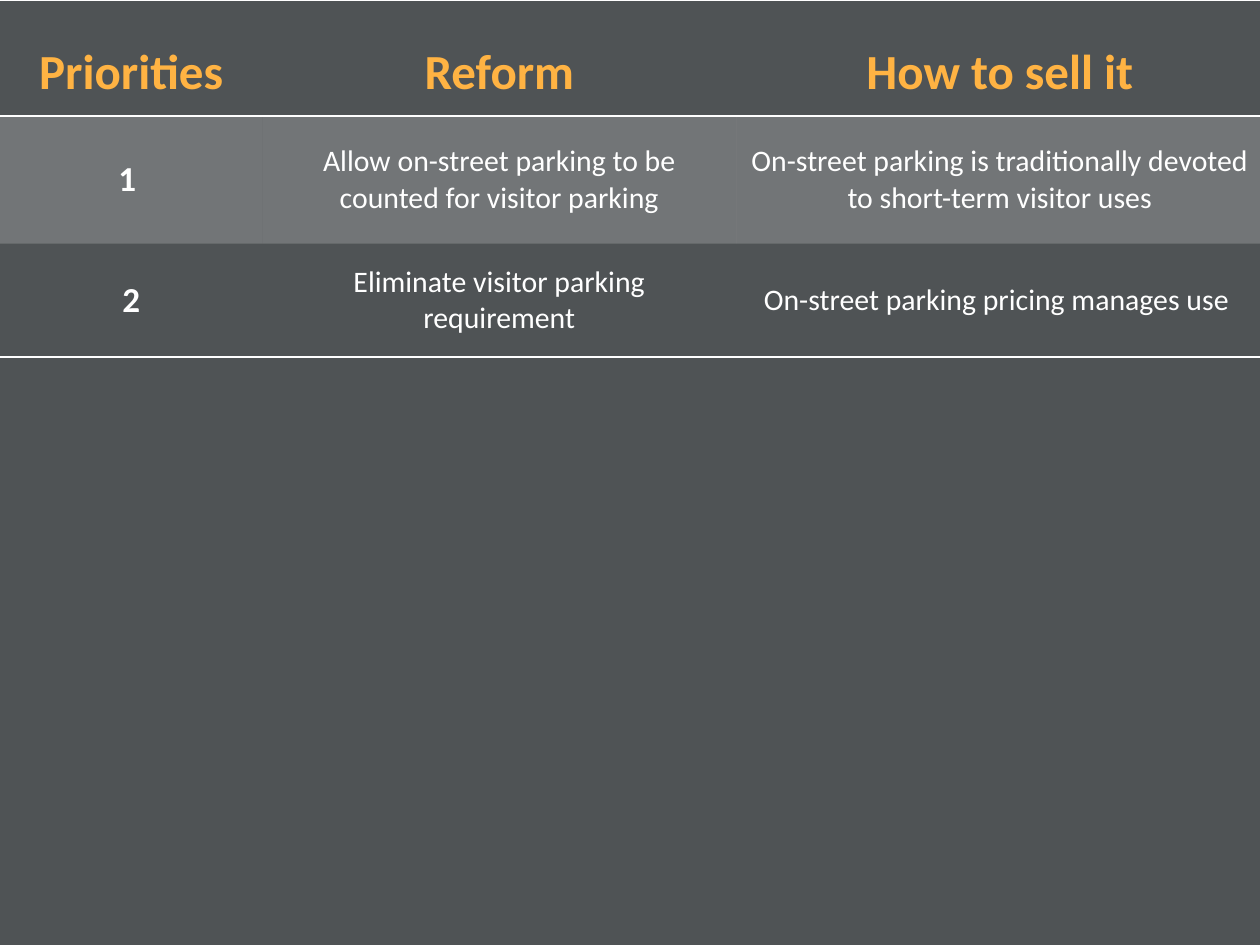
from dataclasses import dataclass

from lxml.etree import SubElement
from pptx import Presentation
from pptx.dml.color import RGBColor
from pptx.enum.text import MSO_ANCHOR, PP_ALIGN
from pptx.oxml import parse_xml
from pptx.oxml.ns import nsdecls, qn
from pptx.util import Cm, Pt


@dataclass(frozen=True)
class Theme:
    font: str = "Calibri"
    background: str = "4F5355"
    heading: str = "FFB343"
    text: str = "FFFFFF"
    rule: str = "FFFFFF"
    band: str = "FFFFFF"
    band_opacity: int = 20
    heading_size: int = 28
    number_size: int = 20
    body_size: int = 17
    rule_width: int = 1


THEME = Theme()
NO_GRID_STYLE = "{2D5ABB26-0587-4C30-8999-92F81FD0307C}"
COLUMN_WIDTHS = (5.29, 9.55, 10.63)
ROW_HEIGHTS = (2.34, 2.57, 2.29)
ROWS = (
    ("Priorities", "Reform", "How to sell it"),
    (
        "1 ",
        "Allow on-street parking to be counted for visitor parking",
        "On-street parking is traditionally devoted to short-term visitor uses",
    ),
    (
        "2",
        "Eliminate visitor parking requirement",
        "On-street parking pricing manages use ",
    ),
)
RULES = (("lnT", "lnB"), (), ("lnB",))
BANDED_ROW = 1

HEADING = {"size": Pt(THEME.heading_size), "bold": True, "color": THEME.heading}
NUMBER = {"size": Pt(THEME.number_size), "bold": True, "color": THEME.text}
BODY = {"size": Pt(THEME.body_size), "bold": False, "color": THEME.text}
HEADING_MARGINS = {
    "margin_left": Cm(0.13),
    "margin_right": Cm(0.13),
    "margin_top": 0,
    "margin_bottom": 0,
}
BODY_MARGINS = {name: Cm(0.25) for name in HEADING_MARGINS}


def set_attributes(target, values):
    for name, value in values.items():
        setattr(target, name, value)


def write_cell(cell, text, style, margins, line_spacing):
    set_attributes(cell, {**margins, "vertical_anchor": MSO_ANCHOR.MIDDLE})
    para = cell.text_frame.paragraphs[0]
    set_attributes(
        para, {"alignment": PP_ALIGN.CENTER, "line_spacing": line_spacing}
    )
    span = para.add_run()
    span.text = text
    font = {name: value for name, value in style.items() if name != "color"}
    set_attributes(span.font, {**font, "name": THEME.font})
    span.font.color.rgb = RGBColor.from_string(style["color"])


def fill_cell(cell, banded):
    if not banded:
        cell.fill.background()
        return
    cell.fill.solid()
    cell.fill.fore_color.rgb = RGBColor.from_string(THEME.band)
    color = cell._tc.tcPr.find(f".//{qn('a:srgbClr')}")
    SubElement(color, qn("a:alpha"), val=str(THEME.band_opacity * 1000))


def rule_cell(cell, edges):
    for position, edge in enumerate(edges):
        line = parse_xml(
            f'<a:{edge} {nsdecls("a")} w="{Pt(THEME.rule_width)}">'
            f'<a:solidFill><a:srgbClr val="{THEME.rule}"/></a:solidFill>'
            f"</a:{edge}>"
        )
        cell._tc.tcPr.insert(position, line)


def add_priorities_table(page, left, top):
    frame = page.shapes.add_table(
        len(ROWS),
        len(COLUMN_WIDTHS),
        left,
        top,
        Cm(sum(COLUMN_WIDTHS)),
        Cm(sum(ROW_HEIGHTS)),
    )
    table = frame.table
    table.horz_banding = False
    table._tbl.tblPr.find(qn("a:tableStyleId")).text = NO_GRID_STYLE
    for column, width in zip(table.columns, COLUMN_WIDTHS):
        column.width = Cm(width)
    for row, height in zip(table.rows, ROW_HEIGHTS):
        row.height = Cm(height)

    for row_index, texts in enumerate(ROWS):
        is_heading = row_index == 0
        margins = HEADING_MARGINS if is_heading else BODY_MARGINS
        line_spacing = 1.5 if is_heading else 1.0
        for column_index, text in enumerate(texts):
            cell = table.cell(row_index, column_index)
            body_style = NUMBER if column_index == 0 else BODY
            style = HEADING if is_heading else body_style
            write_cell(cell, text, style, margins, line_spacing)
            fill_cell(cell, row_index == BANDED_ROW)
            rule_cell(cell, RULES[row_index])


def main():
    deck = Presentation()
    set_attributes(deck, {"slide_width": Cm(25.4), "slide_height": Cm(19.05)})
    page = deck.slides.add_slide(deck.slide_layouts[6])
    page.background.fill.solid()
    page.background.fill.fore_color.rgb = RGBColor.from_string(THEME.background)
    add_priorities_table(page, Cm(0), Cm(0))
    deck.save("out.pptx")


if __name__ == "__main__":
    main()
